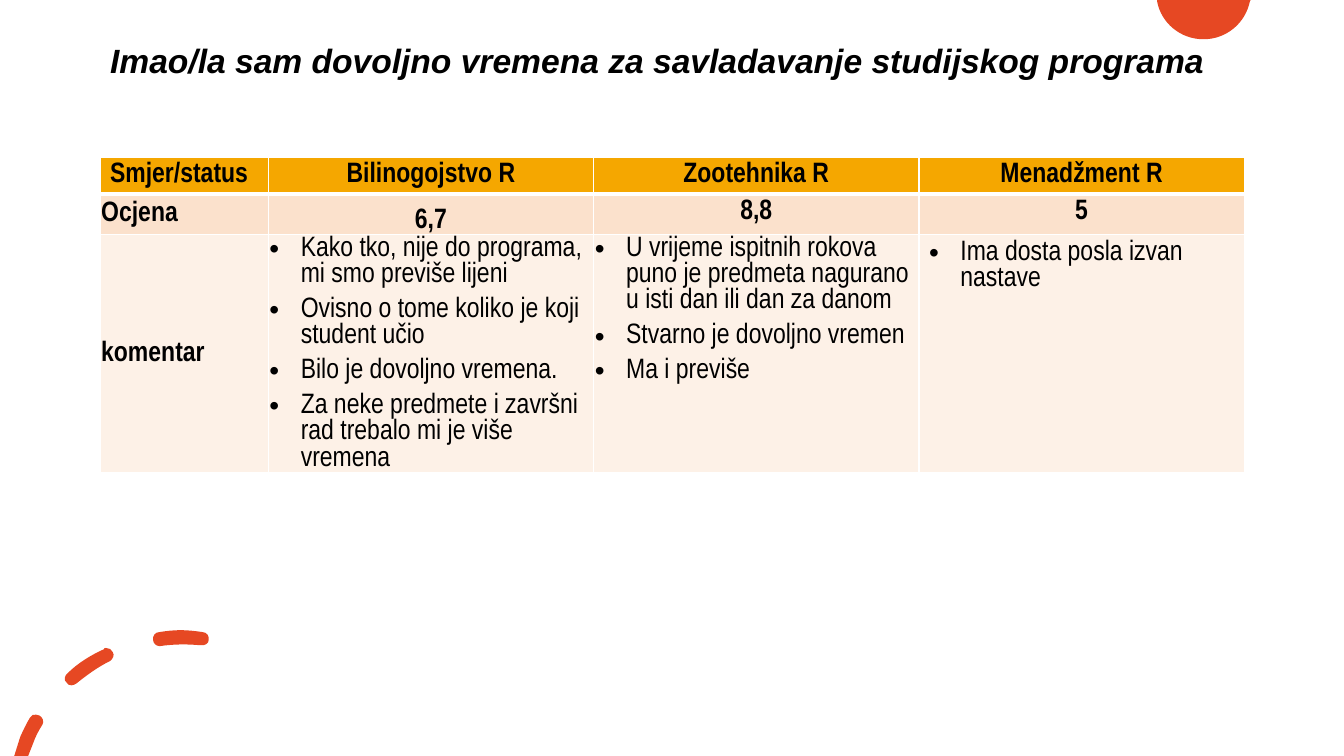
from lxml.etree import SubElement
from pptx import Presentation
from pptx.dml.color import RGBColor
from pptx.enum.text import MSO_ANCHOR, PP_ALIGN
from pptx.oxml.ns import qn
from pptx.util import Cm, Pt

RED = RGBColor(0xE6, 0x48, 0x23)
BLACK = RGBColor(0, 0, 0)
WHITE = RGBColor(0xFF, 0xFF, 0xFF)
ROW_FILLS = [RGBColor(0xF5, 0xA7, 0x00), RGBColor(0xFB, 0xE1, 0xCC), RGBColor(0xFD, 0xF1, 0xE7)]
ROW_HEIGHTS = [0.66, 1.03, 2.36]
COLUMN_WIDTHS = [4.24, 8.2, 8.2, 8.2]
LEFT = Cm(2.52)
TIGHT = Cm(0.03)

HEADINGS = ["Smjer/status", "Bilinogojstvo R", "Zootehnika R", "Menadžment R"]
GRADES = ["Ocjena", "6,7", "8,8", "5"]
COMMENTS = [
    ["Kako tko, nije do programa, mi smo previše lijeni",
     "Ovisno o tome koliko je koji student učio",
     "Bilo je dovoljno vremena.",
     "Za neke predmete i završni rad trebalo mi je više vremena"],
    ["U vrijeme ispitnih rokova puno je predmeta nagurano u isti dan ili dan za danom",
     "Stvarno je dovoljno vremen",
     "Ma i previše"],
    ["Ima dosta posla izvan nastave"],
]

# Outlines in cm: a start point, then lines (one point) and Bézier curves (three points).
HALF_DISC = [(29.16, 0), [(31.52, 0)], [(31.5, 0.03)],
             [(31.39, 0.58), (30.91, 0.99), (30.33, 0.99)],
             [(29.75, 0.99), (29.26, 0.58), (29.16, 0.03)]]
DASHES = [
    [(0.91, 18.01), [(0.86, 17.98), (0.79, 18.03), (0.76, 18.08)],
     [(0.66, 18.24), (0.58, 18.42), (0.51, 18.57)], [(0.36, 19.05)], [(0.71, 19.05)],
     [(0.84, 18.72)], [(0.89, 18.57), (0.97, 18.42), (1.07, 18.26)],
     [(1.12, 18.19), (1.07, 18.06), (0.99, 18.03)],
     [(0.97, 18.01), (0.94, 18.01), (0.91, 18.01)]],
    [(2.67, 16.33), [(2.64, 16.33), (2.62, 16.33), (2.62, 16.36)],
     [(2.29, 16.51), (1.96, 16.71), (1.7, 16.97)],
     [(1.63, 17.02), (1.6, 17.15), (1.68, 17.2)],
     [(1.7, 17.25), (1.75, 17.27), (1.8, 17.27)], [(1.8, 17.27)],
     [(1.85, 17.27), (1.88, 17.25), (1.93, 17.22)],
     [(2.18, 17.02), (2.46, 16.81), (2.77, 16.66)],
     [(2.84, 16.61), (2.9, 16.51), (2.84, 16.43)],
     [(2.82, 16.36), (2.74, 16.33), (2.67, 16.33)]],
    [(4.55, 15.88), [(4.37, 15.88), (4.19, 15.9), (4.01, 15.93)],
     [(3.91, 15.93), (3.84, 16.03), (3.86, 16.13)],
     [(3.86, 16.21), (3.94, 16.28), (4.01, 16.28)],
     [(4.04, 16.28), (4.04, 16.28), (4.04, 16.28)],
     [(4.39, 16.23), (4.72, 16.23), (5.05, 16.26)],
     [(5.16, 16.28), (5.26, 16.21), (5.26, 16.13)],
     [(5.28, 16.03), (5.21, 15.93), (5.11, 15.93)],
     [(5.11, 15.93), (5.11, 15.93), (5.11, 15.93)],
     [(4.93, 15.9), (4.72, 15.88), (4.55, 15.88)]],
]


def add_outlines(page, outlines):
    """Draw closed outlines as one red shape, with its curves as Bézier segments."""
    builder = page.shapes.build_freeform(*map(Cm, outlines[0][0]))
    segments = []
    for index, (start, *parts) in enumerate(outlines):
        if index:
            builder.move_to(*map(Cm, start))
        points = [(Cm(x), Cm(y)) for part in parts for x, y in part]
        builder.add_line_segments(points, close=True)
        segments += parts
    shape = builder.convert_to_shape()
    shape.shadow.inherit = False
    shape.fill.solid()
    shape.fill.fore_color.rgb = RED
    shape.line.fill.background()
    bend_curves(shape, segments)


def bend_curves(shape, segments):
    """Join each three-point run of straight lines into one Bézier curve."""
    lines = iter(list(shape._element.iter(qn("a:lnTo"))))
    for segment in segments:
        first, *others = [next(lines) for _ in segment]
        if others:
            first.tag = qn("a:cubicBezTo")
            for line in others:
                first.append(line[0])
                line.getparent().remove(line)


def set_title(page, text):
    title = page.shapes.title
    title.left, title.top, title.width, title.height = LEFT, Cm(0.55), Cm(29.21), Cm(2.06)
    title.text_frame.text = text
    title.text_frame.vertical_anchor = MSO_ANCHOR.MIDDLE
    para = title.text_frame.paragraphs[0]
    para.alignment = PP_ALIGN.LEFT
    para.line_spacing = 0.9
    set_font(para, "Arial", 24, True)
    para.font.italic = True


def set_font(para, name, size, bold):
    para.font.name = name
    para.font.size = Pt(size)
    para.font.bold = bold
    para.font.color.rgb = BLACK


def add_bullet(para):
    properties = para._p.get_or_add_pPr()
    properties.set("marL", str(Cm(0.79)))
    properties.set("indent", str(-Cm(0.79)))
    SubElement(properties, qn("a:buFont"), typeface="Arial")
    SubElement(properties, qn("a:buChar"), char="•")


def set_borders(cell, row):
    """Draw thin white borders, with a thick one between the header and the grades."""
    thick_side = {0: "B", 1: "T"}.get(row)
    for side in "LRTB":
        width = Pt(3 if side == thick_side else 1)
        line = SubElement(cell._tc.get_or_add_tcPr(), qn(f"a:ln{side}"), w=str(width))
        fill = SubElement(line, qn("a:solidFill"))
        SubElement(fill, qn("a:srgbClr"), val=str(WHITE))


def fill_cell(cell, lines, row, bulleted=False, alignment=PP_ALIGN.LEFT):
    set_borders(cell, row)
    cell.fill.solid()
    cell.fill.fore_color.rgb = ROW_FILLS[row]
    cell.text_frame.text = "\n".join(lines)
    for para in cell.text_frame.paragraphs:
        if bulleted:
            add_bullet(para)
        para.alignment = alignment
        para.space_before = Pt(6)
        set_font(para, "Arial Narrow", 20, not bulleted)


def tighten(cell, anchor):
    cell.margin_left = cell.margin_top = cell.margin_right = TIGHT
    cell.margin_bottom = 0
    cell.vertical_anchor = anchor


def add_survey_table(page):
    frame = page.shapes.add_table(3, 4, LEFT, Cm(3.96), Cm(28.84), Cm(9.63))
    table = frame.table
    for column, width in zip(table.columns, COLUMN_WIDTHS):
        column.width = Cm(width)
    for row, height in zip(table.rows, ROW_HEIGHTS):
        row.height = Cm(height)
    frame.height = Cm(9.63)
    for row, texts in enumerate([HEADINGS, GRADES]):
        for column, text in enumerate(texts):
            alignment = PP_ALIGN.CENTER if column else PP_ALIGN.LEFT
            fill_cell(table.cell(row, column), [text], row, alignment=alignment)
    fill_cell(table.cell(2, 0), ["komentar"], 2)
    for column, comments in enumerate(COMMENTS, 1):
        fill_cell(table.cell(2, column), comments, 2, bulleted=True)
    for row in (1, 2):
        tighten(table.cell(row, 0), MSO_ANCHOR.MIDDLE)
    tighten(table.cell(1, 1), MSO_ANCHOR.BOTTOM)
    for column in (1, 2):
        tighten(table.cell(2, column), MSO_ANCHOR.TOP)


def main():
    deck = Presentation()
    deck.slide_width, deck.slide_height = Cm(33.87), Cm(19.05)
    page = deck.slides.add_slide(deck.slide_layouts[5])
    add_outlines(page, [HALF_DISC])
    add_outlines(page, DASHES)
    set_title(page, "Imao/la sam dovoljno vremena za savladavanje studijskog programa")
    add_survey_table(page)
    deck.save("out.pptx")


if __name__ == "__main__":
    main()
